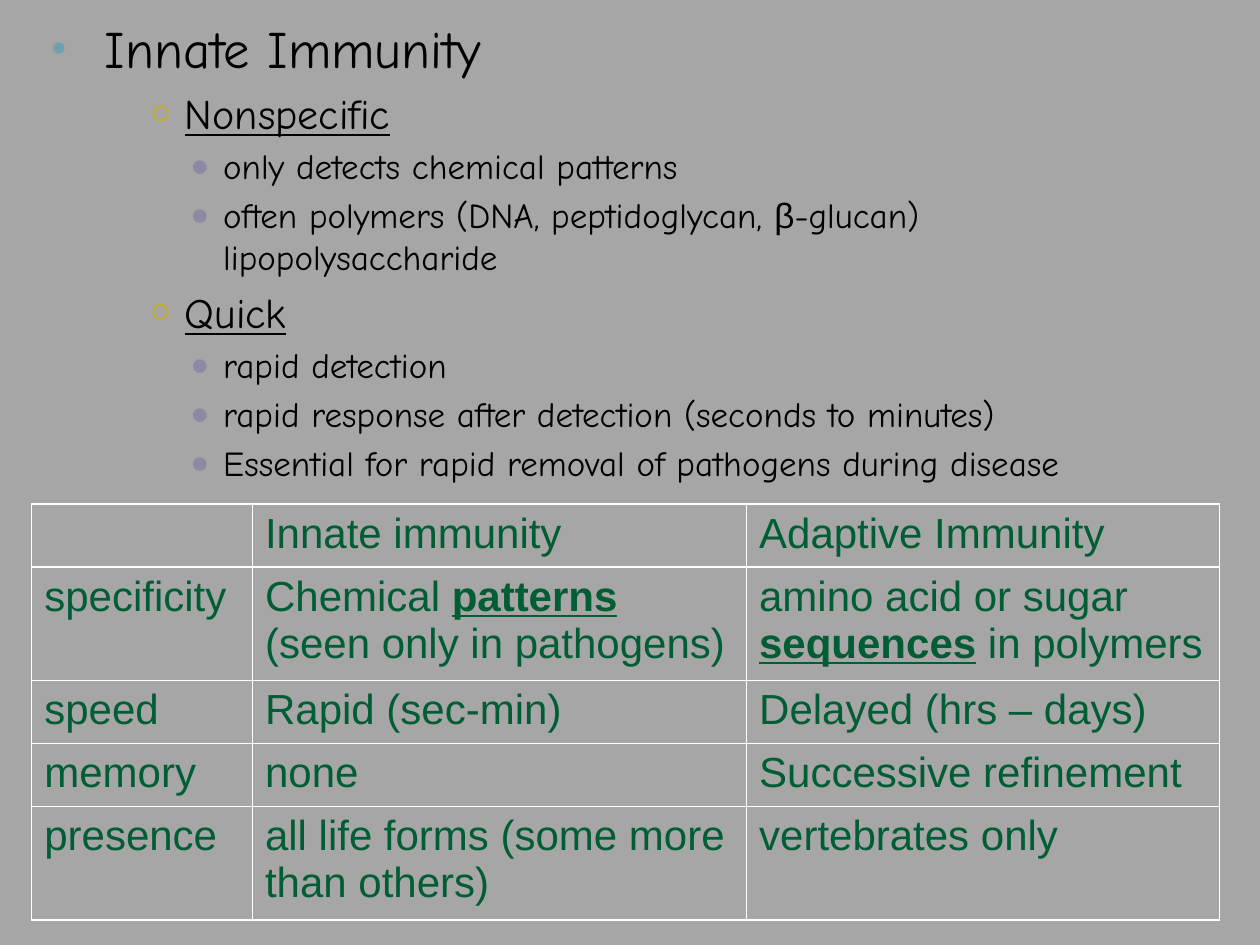
from dataclasses import dataclass

import pptx
import pptx.dml.color
import pptx.enum.text
import pptx.oxml
import pptx.oxml.ns
import pptx.util
from lxml import etree

Cm = pptx.util.Cm
Pt = pptx.util.Pt
qn = pptx.oxml.ns.qn
RGB = pptx.dml.color.RGBColor.from_string


@dataclass(frozen=True)
class Level:
    size: int
    margin: float
    hanging: float
    bullet: str
    color: str
    scale: int
    underline: bool = False


@dataclass(frozen=True)
class Theme:
    background: str = "A6A6A6"
    text: str = "000000"
    table_text: str = "015D34"
    border: str = "FFFFFF"
    outline_font: str = "Comic Neue"
    table_font: str = "Arial"
    table_size: int = 24
    levels: tuple = (
        Level(30, 1.17, 1.07, "•", "6EA0B0", 80),
        Level(24, 2.79, 0.71, "○", "CCAF0A", 85, True),
        Level(20, 3.56, 0.66, "●", "8D89A4", 90),
    )


THEME = Theme()

OUTLINE = [
    (0, "Innate Immunity"),
    (1, "Nonspecific"),
    (2, "only detects chemical patterns"),
    (2, "often polymers (DNA, peptidoglycan, β-glucan) lipopolysaccharide"),
    (1, "Quick"),
    (2, "rapid detection"),
    (2, "rapid response after detection (seconds to minutes)"),
    (2, "Essential for rapid removal of pathogens during disease"),
]

COMPARISON = [
    ("", "Innate immunity", "Adaptive Immunity"),
    ("specificity", "Chemical *patterns* (seen only in pathogens)",
     "amino acid or sugar *sequences* in polymers"),
    ("speed", "Rapid (sec-min)", "Delayed (hrs – days)"),
    ("memory", "none", "Successive refinement"),
    ("presence", "all life forms (some more than others)", "vertebrates only"),
]
COLUMN_WIDTHS = (4.45, 9.96, 9.53)
ROW_HEIGHTS = (1.18, 2.14, 1.18, 1.18, 2.14)


def add_run(p, text, font, size, color, bold=False, underline=False):
    r = p.add_run()
    r.text = text
    r.font.name = font
    r.font.size = Pt(size)
    r.font.bold = bold
    r.font.underline = underline
    r.font.color.rgb = RGB(color)


def add_color(parent, tag, color):
    holder = etree.SubElement(parent, qn(tag))
    etree.SubElement(holder, qn("a:srgbClr"), val=color)


def set_bullet(p, level, first):
    pPr = p._p.get_or_add_pPr()
    pPr.set("marL", str(Cm(level.margin)))
    pPr.set("indent", str(-Cm(level.hanging)))
    if not first:
        before = etree.SubElement(pPr, qn("a:spcBef"))
        etree.SubElement(before, qn("a:spcPct"), val="20000")
    add_color(pPr, "a:buClr", level.color)
    etree.SubElement(pPr, qn("a:buSzPct"), val=str(level.scale * 1000))
    etree.SubElement(pPr, qn("a:buFont"), typeface="Arial")
    etree.SubElement(pPr, qn("a:buChar"), char=level.bullet)


def add_outline(s, left, top, width, height):
    tf = s.shapes.add_textbox(Cm(left), Cm(top), Cm(width), Cm(height)).text_frame
    tf.word_wrap = True
    tf.vertical_anchor = pptx.enum.text.MSO_ANCHOR.TOP
    for i, (depth, text) in enumerate(OUTLINE):
        p = tf.add_paragraph() if i else tf.paragraphs[0]
        level = THEME.levels[depth]
        p.level = depth + 1 if depth else 0
        set_bullet(p, level, i == 0)
        head, beta, tail = text.partition("β")
        for part in filter(None, (head, beta, tail)):
            font = THEME.table_font if part == "β" else THEME.outline_font
            add_run(p, part, font, level.size, THEME.text, underline=level.underline)


def set_borders(cell):
    tcPr = cell._tc.get_or_add_tcPr()
    for i, side in enumerate(("a:lnL", "a:lnR", "a:lnT", "a:lnB")):
        ln = etree.Element(qn(side), w=str(Pt(1)))
        add_color(ln, "a:solidFill", THEME.border)
        tcPr.insert(i, ln)


def add_comparison(s, left, top):
    table = s.shapes.add_table(
        len(COMPARISON), len(COLUMN_WIDTHS), Cm(left), Cm(top),
        Cm(sum(COLUMN_WIDTHS)), Cm(sum(ROW_HEIGHTS))).table
    table.first_row = table.horz_banding = False
    for column, width in zip(table.columns, COLUMN_WIDTHS):
        column.width = Cm(width)
    for row, height, texts in zip(table.rows, ROW_HEIGHTS, COMPARISON):
        row.height = Cm(height)
        for cell, text in zip(row.cells, texts):
            cell.fill.background()
            set_borders(cell)
            p = cell.text_frame.paragraphs[0]
            for i, part in enumerate(text.split("*")):
                strong = i % 2 == 1
                if part:
                    add_run(p, part, THEME.table_font, THEME.table_size,
                            THEME.table_text, strong, strong)


def main():
    prs = pptx.Presentation()
    prs.slide_width, prs.slide_height = Cm(25.4), Cm(19.05)
    s = prs.slides.add_slide(prs.slide_layouts[6])
    s.background.fill.solid()
    s.background.fill.fore_color.rgb = RGB(THEME.background)
    add_outline(s, 0.69, 0.2, 22.86, 9.96)
    add_comparison(s, 0.64, 10.16)
    prs.save("out.pptx")


if __name__ == "__main__":
    main()
